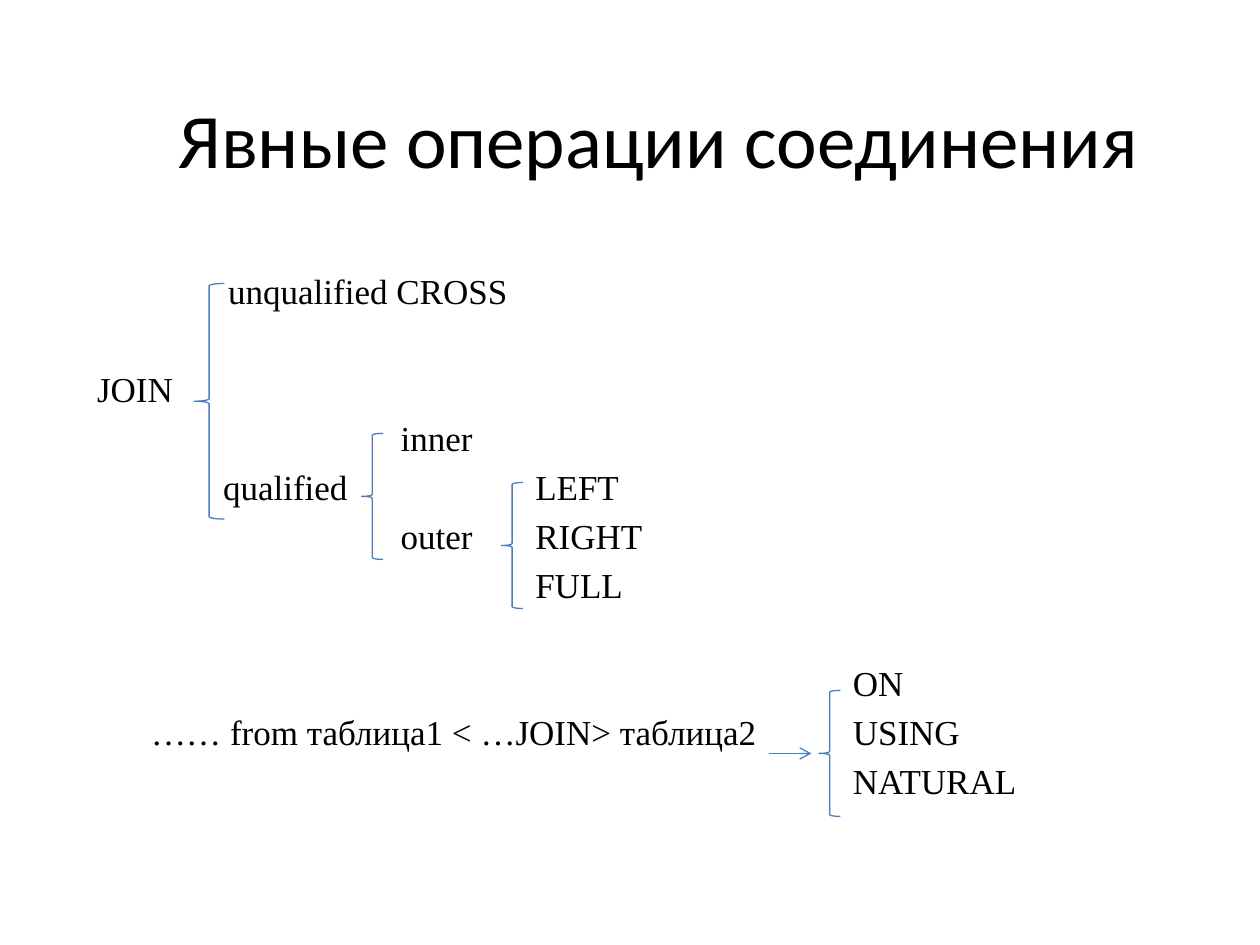
from dataclasses import dataclass

from pptx import Presentation
from pptx.dml.color import RGBColor
from pptx.enum.shapes import MSO_CONNECTOR as Connector, MSO_SHAPE as Shape
from pptx.enum.text import MSO_ANCHOR as Anchor, MSO_AUTO_SIZE as AutoSize, PP_ALIGN as Align
from pptx.oxml.ns import qn
from pptx.util import Inches, Pt
from lxml.etree import SubElement

COLORS = {"text": "000000", "line": "4B7EBC"}
ROW_PITCH = 28
ROW_GAP = 4
LINE_WIDTH = 0.75
BODY_LEFT, BODY_TOP = 0.67, 2.09


@dataclass
class Label:
    row: int
    text: str
    indent: float = 0


@dataclass
class Column:
    left: float
    width: float
    labels: list[Label]


@dataclass
class Brace:
    left: float
    top: float
    width: float = 0.17
    height: float = 1


BODY_LABELS = [
    Label(0, "unqualified CROSS", 1.04),
    Label(2, "JOIN"),
    Label(3, "inner", 2.41),
    Label(4, "qualified", 1),
    Label(5, "outer", 2.41),
    Label(9, "…… from таблица1 < …JOIN> таблица2", 0.43),
]

COLUMNS = [
    Column(4.15, 1.5, [Label(4, "LEFT"), Label(5, "RIGHT"), Label(6, "FULL")]),
    Column(6.67, 2, [Label(8, "ON"), Label(9, "USING"), Label(10, "NATURAL")]),
]

BRACES = [
    Brace(1.54, 2.25, 0.24, 1.87),
    Brace(2.87, 3.44),
    Brace(3.98, 3.83),
    Brace(6.5, 5.48),
]


def place(shape, left: float, top: float, width: float, height: float) -> None:
    shape.left, shape.top = Inches(left), Inches(top)
    shape.width, shape.height = Inches(width), Inches(height)


def format_runs(paragraph, font_name: str, size: int) -> None:
    for run in paragraph.runs:
        run.font.name = font_name
        run.font.size = Pt(size)
        run.font.color.rgb = RGBColor.from_string(COLORS["text"])


def style_line(line) -> None:
    line.color.rgb = RGBColor.from_string(COLORS["line"])
    line.width = Pt(LINE_WIDTH)


def write_labels(frame, labels: list[Label]) -> None:
    frame.word_wrap = True
    frame.auto_size = AutoSize.NONE
    frame.vertical_anchor = Anchor.TOP
    previous_row = None
    for label in labels:
        if previous_row is None:
            paragraph, space = frame.paragraphs[0], 0
        else:
            paragraph = frame.add_paragraph()
            space = ROW_GAP + ROW_PITCH * (label.row - previous_row - 1)
        previous_row = label.row
        paragraph.text = label.text
        paragraph.alignment = Align.LEFT
        paragraph.space_before = Pt(space)
        properties = paragraph._p.get_or_add_pPr()
        properties.set("marL", str(Inches(label.indent)))
        properties.set("indent", "0")
        format_runs(paragraph, "Times New Roman", 20)


def add_column(slide, column: Column) -> None:
    top = BODY_TOP + column.labels[0].row * ROW_PITCH / 72
    height = 0.1 + len(column.labels) * ROW_PITCH / 72
    text_box = slide.shapes.add_textbox(
        Inches(column.left), Inches(top), Inches(column.width), Inches(height)
    )
    write_labels(text_box.text_frame, column.labels)


def add_brace(slide, brace: Brace) -> None:
    shape = slide.shapes.add_shape(
        Shape.LEFT_BRACE,
        Inches(brace.left), Inches(brace.top), Inches(brace.width), Inches(brace.height),
    )
    shape.shadow.inherit = False
    shape.fill.background()
    style_line(shape.line)


def add_arrow(slide, start: float, end: float, height: float) -> None:
    arrow = slide.shapes.add_connector(
        Connector.STRAIGHT, Inches(start), Inches(height), Inches(end), Inches(height)
    )
    style_line(arrow.line)
    SubElement(arrow.line._get_or_add_ln(), qn("a:tailEnd"), type="arrow")
    SubElement(arrow._element.spPr, qn("a:effectLst"))


def main() -> None:
    presentation = Presentation()
    presentation.slide_width, presentation.slide_height = Inches(10), Inches(7.5)
    slide = presentation.slides.add_slide(presentation.slide_layouts[0])

    title = slide.shapes.title
    place(title, 0.98, 0.29, 8.5, 1.61)
    title.text_frame.text = "Явные операции соединения"
    title.text_frame.vertical_anchor = Anchor.MIDDLE
    title.text_frame.paragraphs[0].alignment = Align.CENTER
    format_runs(title.text_frame.paragraphs[0], "Calibri", 44)

    body = slide.placeholders[1]
    place(body, BODY_LEFT, BODY_TOP, 8.9, 4.89)
    write_labels(body.text_frame, BODY_LABELS)

    for column in COLUMNS:
        add_column(slide, column)
    for brace in BRACES:
        add_brace(slide, brace)
    add_arrow(slide, 6.1, 6.44, 5.98)

    presentation.save("out.pptx")


if __name__ == "__main__":
    main()
